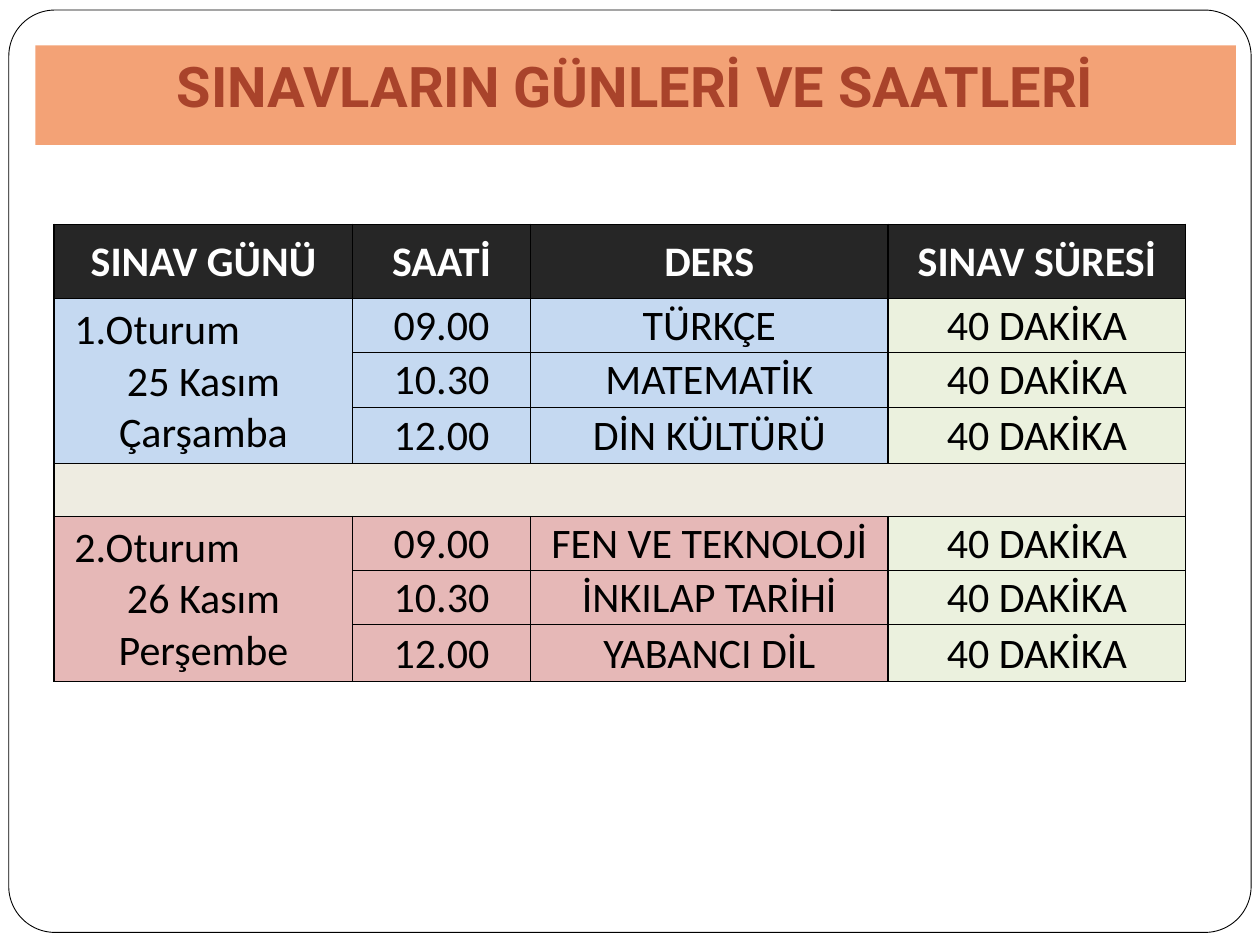
from lxml.etree import SubElement
from pptx import Presentation
from pptx.dml.color import RGBColor
from pptx.enum.shapes import MSO_SHAPE as Shape
from pptx.enum.text import MSO_ANCHOR as Anchor, PP_ALIGN as Align
from pptx.oxml.ns import qn
from pptx.util import Inches, Pt

BLACK = RGBColor(0x00, 0x00, 0x00)
WHITE = RGBColor(0xFF, 0xFF, 0xFF)
CHARCOAL = RGBColor(0x26, 0x26, 0x26)
ORANGE = RGBColor(0xF3, 0xA2, 0x76)
RUST = RGBColor(0xA9, 0x43, 0x2B)
BLUE = RGBColor(0xC5, 0xD9, 0xF1)
ROSE = RGBColor(0xE6, 0xB8, 0xB7)
GREEN = RGBColor(0xEB, 0xF1, 0xDE)
SAND = RGBColor(0xEE, 0xEC, 0xE1)

TITLE = "SINAVLARIN GÜNLERİ VE SAATLERİ"
HEADERS = ["SINAV GÜNÜ", "SAATİ", "DERS", "SINAV SÜRESİ"]
HOURS = ["09.00", "10.30", "12.00"]
DURATION = "40 DAKİKA"
SESSIONS = [
    ("1.Oturum\n25 Kasım\nÇarşamba", BLUE, ["TÜRKÇE", "MATEMATİK", "DİN KÜLTÜRÜ"]),
    ("2.Oturum\n26 Kasım\nPerşembe", ROSE, ["FEN VE TEKNOLOJİ", "İNKILAP TARİHİ", "YABANCI DİL"]),
]

COLUMN_WIDTHS = [2.37, 1.41, 2.84, 2.36]
SESSION_HEIGHTS = [0.43, 0.43, 0.45]
ROW_HEIGHTS = [0.59, *SESSION_HEIGHTS, 0.42, *SESSION_HEIGHTS]
SESSION_ROWS = [1, 5]
SPACER_ROW = 4
THICK_ROW_EDGES = {0, 1, 4, 5, 8}
THIN_COLUMN_EDGE = 2


def style_font(font, name, size, color, bold):
    font.name, font.size, font.bold = name, Pt(size), bold
    font.color.rgb = color


def fill_solid(target, color):
    target.fill.solid()
    target.fill.fore_color.rgb = color


def set_borders(cell, row, column):
    def row_edge(edge):
        return 1 if column == 0 or edge in THICK_ROW_EDGES else 0.5

    def column_edge(edge):
        return 0.5 if edge == THIN_COLUMN_EDGE else 1

    widths = {
        "a:lnL": column_edge(column),
        "a:lnR": column_edge(column + 1),
        "a:lnT": row_edge(row),
        "a:lnB": row_edge(row + 1),
    }
    properties = cell._tc.get_or_add_tcPr()
    for position, (tag, width) in enumerate(widths.items()):
        line = SubElement(properties, qn(tag), w=str(Pt(width)))
        solid = SubElement(line, qn("a:solidFill"))
        SubElement(solid, qn("a:srgbClr"), val=str(BLACK))
        properties.insert(position, line)


def write_cell(cell, text, color, bold):
    cell.text_frame.text = text
    for paragraph in cell.text_frame.paragraphs:
        paragraph.alignment = Align.CENTER
        for run in paragraph.runs:
            style_font(run.font, "Calibri", 24, color, bold)


def schedule_rows():
    rows = [[(header, CHARCOAL) for header in HEADERS]]
    for index, (day, color, lessons) in enumerate(SESSIONS):
        if index:
            rows.append([("", SAND)] * len(HEADERS))
        for number, (hour, lesson) in enumerate(zip(HOURS, lessons)):
            label = "" if number else day
            rows.append([(label, color), (hour, color), (lesson, color), (DURATION, GREEN)])
    return rows


def add_frame(slide):
    frame = slide.shapes.add_shape(
        Shape.ROUNDED_RECTANGLE, Inches(0.07), Inches(0.08), Inches(9.86), Inches(7.32))
    frame.adjustments[0] = 0.05
    frame.shadow.inherit = False
    fill_solid(frame, WHITE)
    frame.line.color.rgb = BLACK
    frame.line.width = Pt(0.5)
    slide.shapes._spTree.insert(2, frame._element)


def add_title(slide):
    title = slide.shapes.title
    title.left, title.top = Inches(0.28), Inches(0.36)
    title.width, title.height = Inches(9.53), Inches(0.79)
    fill_solid(title, ORANGE)
    title.text_frame.text = TITLE
    title.text_frame.vertical_anchor = Anchor.TOP
    paragraph = title.text_frame.paragraphs[0]
    paragraph.alignment = Align.CENTER
    style_font(paragraph.runs[0].font, "Roboto", 32, RUST, True)


def add_schedule(slide):
    table = slide.shapes.add_table(
        len(ROW_HEIGHTS), len(COLUMN_WIDTHS), Inches(0.43), Inches(1.78),
        Inches(sum(COLUMN_WIDTHS)), Inches(sum(ROW_HEIGHTS))).table
    table.first_row = table.horz_banding = False
    for column, width in zip(table.columns, COLUMN_WIDTHS):
        column.width = Inches(width)
    for row, height in zip(table.rows, ROW_HEIGHTS):
        row.height = Inches(height)

    for row, entries in enumerate(schedule_rows()):
        for column, (text, color) in enumerate(entries):
            cell = table.cell(row, column)
            cell.margin_left = cell.margin_right = cell.margin_top = Inches(0.01)
            cell.margin_bottom = 0
            cell.vertical_anchor = Anchor.MIDDLE
            fill_solid(cell, color)
            set_borders(cell, row, column)
            if text:
                write_cell(cell, text, BLACK if row else WHITE, row == 0)

    for row in SESSION_ROWS:
        day = table.cell(row, 0)
        day.merge(table.cell(row + len(HOURS) - 1, 0))
        heading = day.text_frame.paragraphs[0]
        heading.alignment = Align.LEFT
        heading._p.get_or_add_pPr().set("marL", str(Inches(0.15)))
    table.cell(SPACER_ROW, 0).merge(table.cell(SPACER_ROW, len(HEADERS) - 1))


def main():
    presentation = Presentation()
    presentation.slide_width, presentation.slide_height = Inches(10), Inches(7.5)
    slide = presentation.slides.add_slide(presentation.slide_layouts[5])
    add_frame(slide)
    add_title(slide)
    add_schedule(slide)
    presentation.save("out.pptx")


if __name__ == "__main__":
    main()
